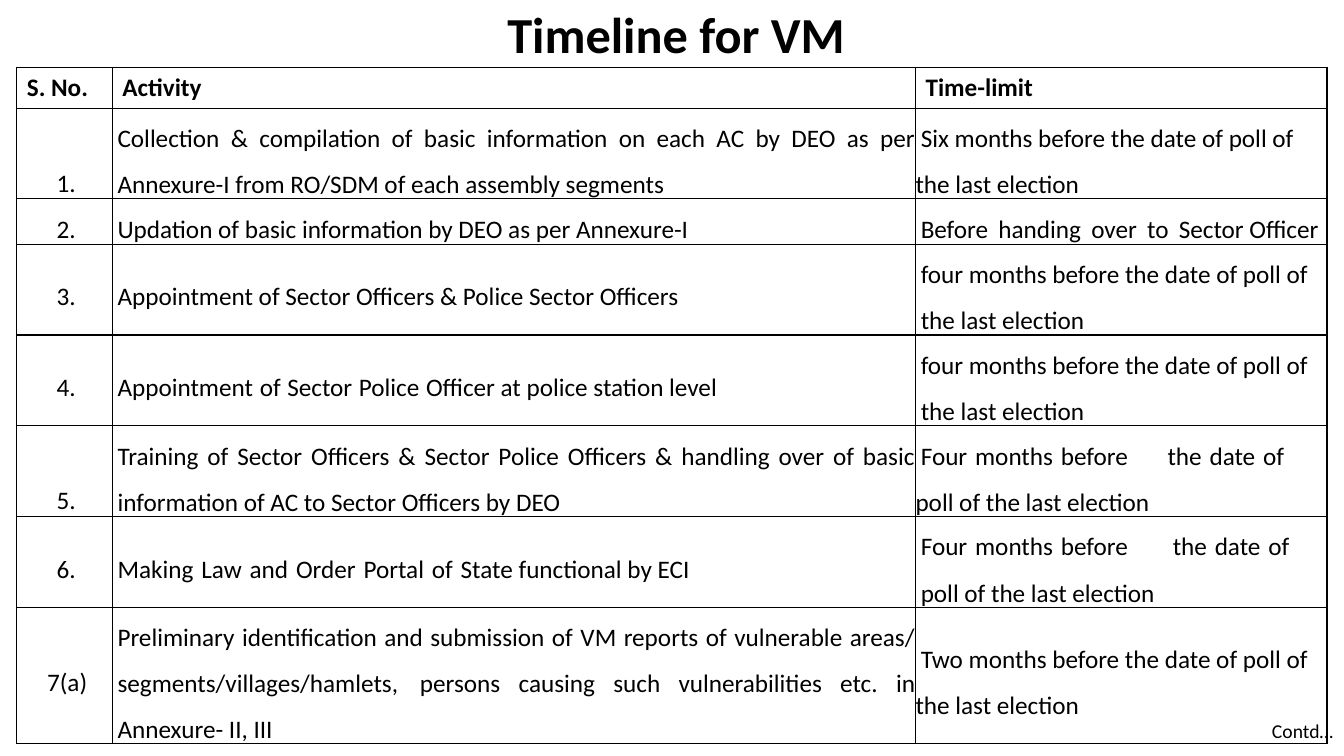
from dataclasses import dataclass

from lxml import etree
from pptx import Presentation
from pptx.dml.color import RGBColor
from pptx.enum.text import MSO_ANCHOR, PP_ALIGN
from pptx.oxml.ns import qn
from pptx.util import Pt

EMU_PER_PX = 9525
BLACK = RGBColor(0, 0, 0)
FONT_NAME = "Calibri"
LEFT, CENTER, JUSTIFY = PP_ALIGN.LEFT, PP_ALIGN.CENTER, PP_ALIGN.JUSTIFY
MIDDLE, BOTTOM = MSO_ANCHOR.MIDDLE, MSO_ANCHOR.BOTTOM
BORDER_TAGS = ("a:lnL", "a:lnR", "a:lnT", "a:lnB")
COLUMN_WIDTHS = (91, 765, 392)
HEADINGS = ("S. No.", "Activity", "Time-limit")
HEADER_HEIGHT = 39
ONE_LINE, TWO_LINES, THREE_LINES = 43, 86, 130


@dataclass(frozen=True)
class Piece:
    text: str
    space_gap: float = 0


@dataclass(frozen=True)
class CellText:
    pieces: tuple[Piece, ...]
    alignment: PP_ALIGN = LEFT
    margin: int = 5
    first_line: int = 0
    tab: int = 0
    anchor: MSO_ANCHOR = MIDDLE


@dataclass(frozen=True)
class Step:
    height: int
    number: CellText
    activity: CellText
    time_limit: CellText


@dataclass(frozen=True)
class Label:
    text: str
    left: int
    top: int
    width: int
    height: int
    size: int
    bold: bool
    alignment: PP_ALIGN
    wrap: bool


def number(text: str, anchor: MSO_ANCHOR = MIDDLE, margin: int = 3) -> CellText:
    return CellText((Piece(text),), CENTER, margin, anchor=anchor)


def plain(text: str, alignment: PP_ALIGN = LEFT, tab: int = 0) -> CellText:
    return CellText((Piece(text),), alignment, tab=tab)


def first_line_indented(*pieces: Piece, tab: int = 0) -> CellText:
    return CellText(pieces, margin=0, first_line=5, tab=tab)


FOUR_MONTHS = plain("four months before the date of poll of the last election")
FOUR_MONTHS_TABBED = (
    Piece("Four months before\tthe date of ", 1.5),
    Piece("poll of the last election"),
)

STEPS = (
    Step(
        TWO_LINES,
        number("1.", BOTTOM),
        plain(
            "Collection & compilation of basic information on each AC by DEO as per "
            "Annexure-I from RO/SDM of each assembly segments",
            JUSTIFY,
        ),
        first_line_indented(Piece("Six months before the date of poll of the last election")),
    ),
    Step(
        ONE_LINE,
        number("2."),
        plain("Updation of basic information by DEO as per Annexure-I"),
        CellText((Piece("Before handing over to Sector", 3.2), Piece(" Officer"))),
    ),
    Step(
        TWO_LINES,
        number("3."),
        plain("Appointment of Sector Officers & Police Sector Officers"),
        FOUR_MONTHS,
    ),
    Step(
        TWO_LINES,
        number("4."),
        CellText((
            Piece("Appointment of Sector Police Officer", 0.6),
            Piece(" at police station level"),
        )),
        FOUR_MONTHS,
    ),
    Step(
        TWO_LINES,
        number("5.", BOTTOM),
        plain(
            "Training of Sector Officers & Sector Police Officers & handling over of basic "
            "information of AC to Sector Officers by DEO",
            JUSTIFY,
        ),
        first_line_indented(*FOUR_MONTHS_TABBED, tab=240),
    ),
    Step(
        TWO_LINES,
        number("6."),
        CellText((
            Piece("Making Law and Order Portal of State", 1.5),
            Piece(" functional by ECI"),
        )),
        CellText(FOUR_MONTHS_TABBED, tab=240),
    ),
    Step(
        THREE_LINES,
        number("7(a)", margin=5),
        plain(
            "Preliminary identification and submission of VM reports of vulnerable areas/ "
            "segments/villages/hamlets,\tpersons causing such vulnerabilities etc. in "
            "Annexure- II, III",
            JUSTIFY,
            tab=288,
        ),
        first_line_indented(Piece("Two months before the date of poll of the last election")),
    ),
)

TITLE = Label("Timeline for VM", 40, -2, 1208, 68, 36, True, CENTER, True)
CONTINUATION = Label("Contd…", 1202, 680, 79, 33, 14, False, LEFT, False)


def px(length: int) -> int:
    return length * EMU_PER_PX


def set_attributes(target, values: dict) -> None:
    for name, value in values.items():
        setattr(target, name, value)


def add_run(paragraph, text: str, size: int = 18, bold: bool = False, gap: float = 0) -> None:
    run = paragraph.add_run()
    run.text = text
    set_attributes(run.font, {"name": FONT_NAME, "size": Pt(size), "bold": bold})
    run.font.color.rgb = BLACK
    if gap:
        run.font._element.set("spc", str(round(gap * 100)))


def add_piece(paragraph, piece: Piece) -> None:
    if not piece.space_gap:
        add_run(paragraph, piece.text)
        return
    for index, word in enumerate(piece.text.split(" ")):
        if index:
            add_run(paragraph, " ", gap=piece.space_gap)
        if word:
            add_run(paragraph, word)


def add_label(slide, label: Label) -> None:
    box = slide.shapes.add_textbox(
        px(label.left), px(label.top), px(label.width), px(label.height)
    )
    box.text_frame.word_wrap = label.wrap
    paragraph = box.text_frame.paragraphs[0]
    paragraph.alignment = label.alignment
    add_run(paragraph, label.text, label.size, label.bold)


def style_cell(cell) -> None:
    properties = cell._tc.get_or_add_tcPr()
    for tag in BORDER_TAGS:
        line = etree.SubElement(properties, qn(tag), w=str(Pt(1)))
        fill = etree.SubElement(line, qn("a:solidFill"))
        etree.SubElement(fill, qn("a:srgbClr"), val=str(BLACK))
    cell.fill.background()


def fill_cell(cell, content: CellText) -> None:
    set_attributes(cell, {
        "margin_left": 0,
        "margin_right": 0,
        "margin_top": 0,
        "margin_bottom": 0,
        "vertical_anchor": content.anchor,
    })
    paragraph = cell.text_frame.paragraphs[0]
    set_attributes(paragraph, {"alignment": content.alignment, "line_spacing": 1.5})
    properties = paragraph._p.get_or_add_pPr()
    properties.set("marL", str(px(content.margin)))
    properties.set("indent", str(px(content.first_line)))
    if content.tab:
        tabs = etree.SubElement(properties, qn("a:tabLst"))
        etree.SubElement(tabs, qn("a:tab"), pos=str(px(content.tab)), algn="l")
    for piece in content.pieces:
        add_piece(paragraph, piece)


def add_timeline(slide) -> None:
    heights = (HEADER_HEIGHT, *(step.height for step in STEPS))
    table = slide.shapes.add_table(
        len(heights), len(COLUMN_WIDTHS), px(16), px(64), px(sum(COLUMN_WIDTHS)), px(sum(heights))
    ).table
    set_attributes(table, {"first_row": False, "horz_banding": False})
    for column, width in zip(table.columns, COLUMN_WIDTHS):
        column.width = px(width)
    for row, height in zip(table.rows, heights):
        row.height = px(height)
    for cell in table.iter_cells():
        style_cell(cell)
    for cell, heading in zip(table.rows[0].cells, HEADINGS):
        add_run(cell.text_frame.paragraphs[0], heading, bold=True)
    for row_index, step in enumerate(STEPS, start=1):
        contents = (step.number, step.activity, step.time_limit)
        for cell, content in zip(table.rows[row_index].cells, contents):
            fill_cell(cell, content)


def main() -> None:
    presentation = Presentation()
    set_attributes(presentation, {"slide_width": px(1280), "slide_height": px(720)})
    slide = presentation.slides.add_slide(presentation.slide_layouts[6])
    add_label(slide, TITLE)
    add_label(slide, CONTINUATION)
    add_timeline(slide)
    presentation.save("out.pptx")


if __name__ == "__main__":
    main()
